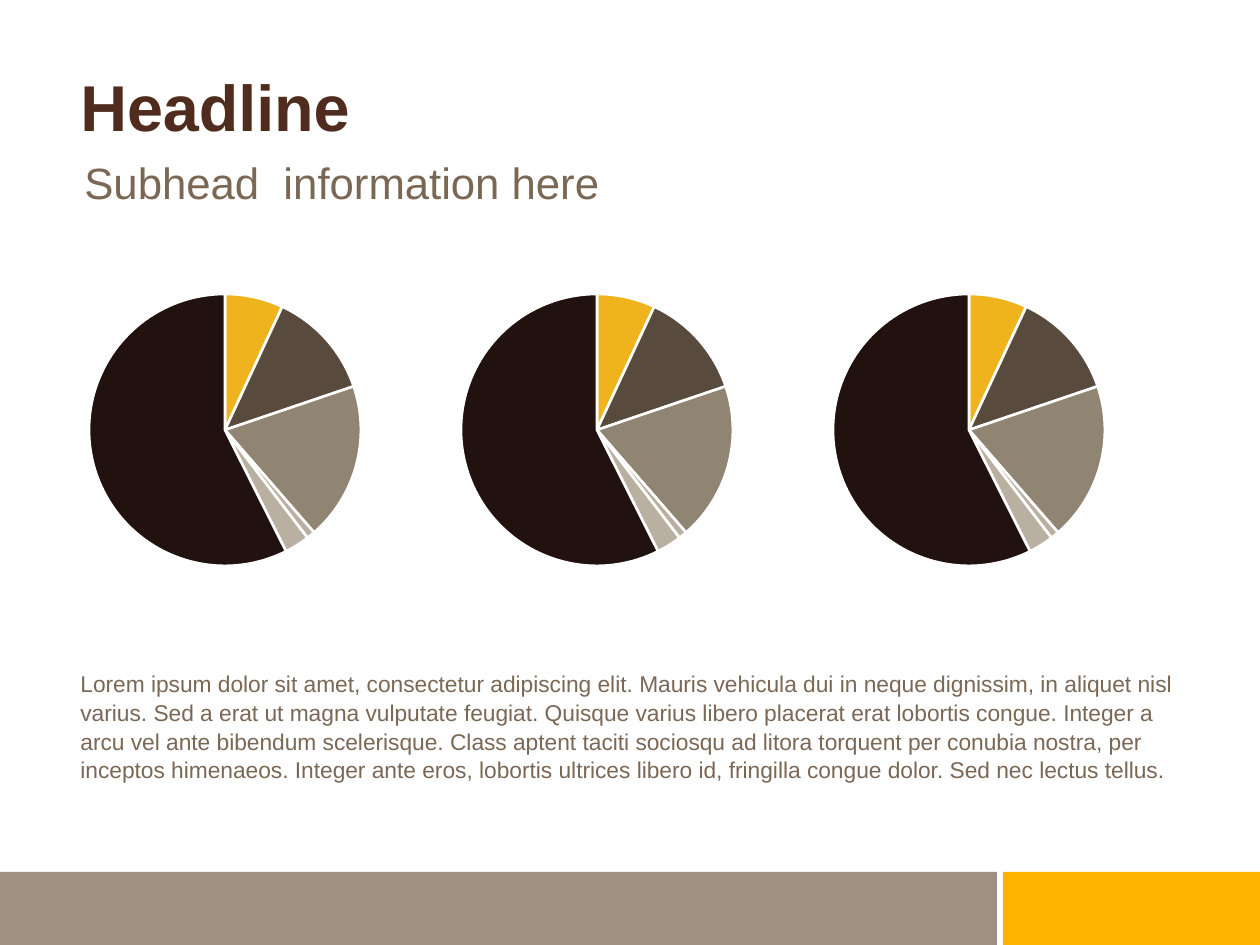
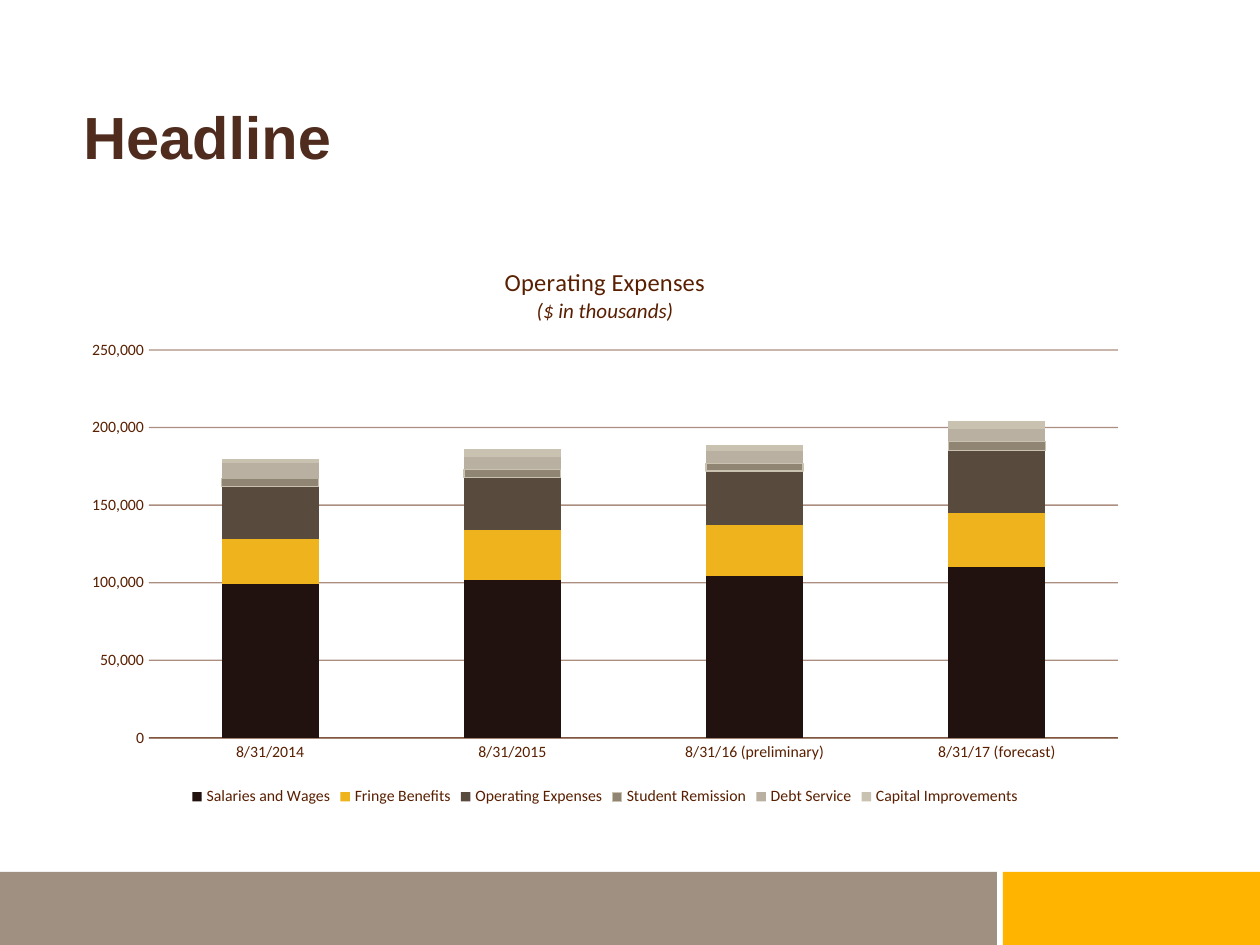
"""Build two headline slides: a row of pie charts and a stacked column chart."""

from dataclasses import dataclass
from typing import NamedTuple

from lxml.etree import SubElement
from pptx import Presentation
from pptx.chart.chart import Chart
from pptx.chart.data import CategoryChartData
from pptx.dml.color import RGBColor
from pptx.dml.fill import FillFormat
from pptx.dml.line import LineFormat
from pptx.enum.chart import XL_CHART_TYPE, XL_LEGEND_POSITION, XL_TICK_MARK
from pptx.enum.shapes import MSO_SHAPE
from pptx.enum.text import MSO_ANCHOR
from pptx.oxml.ns import qn
from pptx.slide import Slide
from pptx.text.text import Font
from pptx.util import Emu, Pt

EMU_PER_PX = 914400 / 126
SLIDE_WIDTH, SLIDE_HEIGHT = 1260, 945
TEXT_FONT, CHART_FONT = "Arial", "Calibri"

COLORS = {
    "white": "FFFFFF",
    "black": "000000",
    "band": "9F9081",
    "accent": "FFB500",
    "headline": "4F2C1D",
    "body": "7A6855",
    "axis": "591F00",
    "espresso": "21120F",
    "gold": "EFB31D",
    "umber": "584B3D",
    "taupe": "908472",
    "stone": "B9B0A1",
    "sand": "CAC2B0",
}

BODY = (
    "Lorem ipsum dolor sit amet, consectetur adipiscing elit. Mauris vehicula dui in neque "
    "dignissim, in aliquet nisl varius. Sed a erat ut magna vulputate feugiat. Quisque varius "
    "libero placerat erat lobortis congue. Integer a arcu vel ante bibendum scelerisque. Class "
    "aptent taciti sociosqu ad litora torquent per conubia nostra, per inceptos himenaeos. "
    "Integer ante eros, lobortis ultrices libero id, fringilla congue dolor. Sed nec lectus tellus."
)


class Box(NamedTuple):
    """A rectangle in px."""

    left: int
    top: int
    width: int
    height: int

    def emu(self) -> list[Emu]:
        """Return the four lengths in EMU."""
        return [px(length) for length in self]


@dataclass(frozen=True)
class TextStyle:
    """The look of a text box."""

    size: int
    color: str
    bold: bool = False
    line_spacing: float = 1.0
    anchor: MSO_ANCHOR = MSO_ANCHOR.TOP


class Band(NamedTuple):
    """A footer band."""

    box: Box
    color: str


class Expense(NamedTuple):
    """One series of the operating expenses chart, in thousands of dollars."""

    name: str
    thousands: tuple[int, ...]
    color: str
    outline: str = ""


class PieSlice(NamedTuple):
    """One slice of a pie chart."""

    value: int
    color: str


BANDS = (
    Band(Box(-2, 872, 999, 73), "band"),
    Band(Box(1003, 872, 257, 73), "accent"),
)

PIE_SLICES = (
    PieSlice(7, "gold"),
    PieSlice(13, "umber"),
    PieSlice(19, "taupe"),
    PieSlice(1, "stone"),
    PieSlice(3, "stone"),
    PieSlice(58, "espresso"),
)
PIE_COUNT, PIE_LEFT, PIE_PITCH = 3, 21, 372
PIE_DIAMETER = 272

EXPENSE_DATES = ("8/31/2014", "8/31/2015", "8/31/16 (preliminary)", "8/31/17 (forecast)")
EXPENSES = (
    Expense("Salaries and Wages", (99, 102, 104, 110), "espresso"),
    Expense("Fringe Benefits", (29, 32, 33, 35), "gold"),
    Expense("Operating Expenses", (34, 34, 35, 40), "umber"),
    Expense("Student Remission", (5, 5, 5, 6), "taupe", "sand"),
    Expense("Debt Service", (10, 8, 8, 8), "stone"),
    Expense("Capital Improvements", (3, 5, 4, 5), "sand"),
)


def px(length: int) -> Emu:
    """Turn px into EMU."""
    return Emu(round(length * EMU_PER_PX))


def rgb(name: str) -> RGBColor:
    """Look up a named colour."""
    return RGBColor.from_string(COLORS[name])


def paint(fill: FillFormat, color: str) -> None:
    """Give a fill one solid colour."""
    fill.solid()
    fill.fore_color.rgb = rgb(color)


def stroke(line: LineFormat, color: str, width: float = 0.75) -> None:
    """Give a line a colour and a width, or hide it without a colour."""
    if not color:
        line.fill.background()
        return
    line.color.rgb = rgb(color)
    line.width = Pt(width)


def style_font(font: Font, name: str, size: int, color: str, bold: bool = False) -> None:
    """Set the face, size, colour and weight of a font."""
    font.name = name
    font.size = Pt(size)
    font.color.rgb = rgb(color)
    font.bold = bold


def add_text(slide: Slide, box: Box, text: str, style: TextStyle) -> None:
    """Draw a wrapped text box with one paragraph."""
    frame = slide.shapes.add_textbox(*box.emu()).text_frame
    frame.word_wrap = True
    frame.vertical_anchor = style.anchor
    paragraph = frame.paragraphs[0]
    paragraph.line_spacing = style.line_spacing
    run = paragraph.add_run()
    run.text = text
    style_font(run.font, TEXT_FONT, style.size, style.color, style.bold)


def add_headline(slide: Slide, box: Box, size: int) -> None:
    """Draw the slide headline."""
    add_text(slide, box, "Headline", TextStyle(size, "headline", True, 0.9))


def add_base_slide(presentation: Presentation) -> Slide:
    """Add a blank slide with the white background and footer bands."""
    slide = presentation.slides.add_slide(presentation.slide_layouts[6])
    paint(slide.background.fill, "white")
    for band in BANDS:
        shape = slide.shapes.add_shape(MSO_SHAPE.RECTANGLE, *band.box.emu())
        shape.shadow.inherit = False
        paint(shape.fill, band.color)
        stroke(shape.line, "")
    return slide


def place_plot(chart: Chart, frame: Box, plot: Box) -> None:
    """Fix the inner plot area, given in slide px, within the chart frame."""
    area = chart.element.find(f".//{qn('c:plotArea')}")
    for previous in area.findall(qn("c:layout")):
        area.remove(previous)
    layout = area.makeelement(qn("c:layout"))
    area.insert(0, layout)
    manual = SubElement(layout, qn("c:manualLayout"))
    settings = {
        "layoutTarget": "inner",
        "xMode": "edge",
        "yMode": "edge",
        "x": (plot.left - frame.left) / frame.width,
        "y": (plot.top - frame.top) / frame.height,
        "w": plot.width / frame.width,
        "h": plot.height / frame.height,
    }
    for tag, value in settings.items():
        SubElement(manual, qn(f"c:{tag}")).set("val", str(value))


def add_pie(slide: Slide, frame: Box) -> None:
    """Draw a pie chart centred in its frame."""
    data = CategoryChartData()
    data.categories = [str(number) for number in range(1, len(PIE_SLICES) + 1)]
    data.add_series("Series 1", [pie_slice.value for pie_slice in PIE_SLICES])
    chart = slide.shapes.add_chart(XL_CHART_TYPE.PIE, *frame.emu(), data).chart
    style_font(chart.font, CHART_FONT, 12, "black")
    chart.has_title = False
    chart.has_legend = False
    plot = chart.plots[0]
    plot.vary_by_categories = True
    for index, pie_slice in enumerate(PIE_SLICES):
        point_format = plot.series[0].points[index].format
        paint(point_format.fill, pie_slice.color)
        stroke(point_format.line, "white", 1.5)
    left = frame.left + (frame.width - PIE_DIAMETER) // 2
    top = frame.top + (frame.height - PIE_DIAMETER) // 2
    place_plot(chart, frame, Box(left, top, PIE_DIAMETER, PIE_DIAMETER))


def add_chart_title(chart: Chart) -> None:
    """Write the two-line title of the expenses chart."""
    frame = chart.chart_title.text_frame
    lines = (("Operating Expenses", 14, False), ("($ in thousands)", 12, True))
    for index, (text, size, italic) in enumerate(lines):
        paragraph = frame.add_paragraph() if index else frame.paragraphs[0]
        run = paragraph.add_run()
        run.text = text
        style_font(run.font, CHART_FONT, size, "axis")
        run.font.italic = italic
    chart.chart_title.include_in_layout = False


def style_axes(chart: Chart) -> None:
    """Set labels, scale and half-transparent lines of both axes."""
    category_axis, value_axis = chart.category_axis, chart.value_axis
    for axis in (category_axis, value_axis):
        axis.major_tick_mark = axis.minor_tick_mark = XL_TICK_MARK.NONE
        style_font(axis.tick_labels.font, CHART_FONT, 9, "axis")
    value_axis.minimum_scale = 0
    value_axis.maximum_scale = 250000
    value_axis.major_unit = 50000
    value_axis.tick_labels.number_format = "#,##0"
    value_axis.tick_labels.number_format_is_linked = False
    stroke(category_axis.format.line, "axis")
    stroke(value_axis.format.line, "")
    stroke(value_axis.major_gridlines.format.line, "axis")
    for parent, child in (("c:catAx", "c:spPr"), ("c:valAx", "c:majorGridlines")):
        lines = chart.element.find(f".//{qn(parent)}/{qn(child)}")
        for color in lines.iter(qn("a:srgbClr")):
            SubElement(color, qn("a:alpha")).set("val", "50000")


def add_expenses_chart(slide: Slide, frame: Box) -> None:
    """Draw the stacked operating expenses chart."""
    data = CategoryChartData(number_format="#,##0")
    data.categories = EXPENSE_DATES
    for expense in EXPENSES:
        data.add_series(expense.name, [value * 1000 for value in expense.thousands])
    chart = slide.shapes.add_chart(XL_CHART_TYPE.COLUMN_STACKED, *frame.emu(), data).chart
    style_font(chart.font, CHART_FONT, 10, "black")
    add_chart_title(chart)
    chart.has_legend = True
    chart.legend.position = XL_LEGEND_POSITION.BOTTOM
    chart.legend.include_in_layout = False
    style_font(chart.legend.font, CHART_FONT, 9, "axis")
    plot = chart.plots[0]
    plot.vary_by_categories = False
    plot.gap_width = 150
    plot.overlap = 100
    for series, expense in zip(plot.series, EXPENSES):
        paint(series.format.fill, expense.color)
        stroke(series.format.line, expense.outline)
    style_axes(chart)
    place_plot(chart, frame, Box(149, 350, 969, 388))


def main() -> None:
    """Build and save the presentation."""
    presentation = Presentation()
    presentation.slide_width = px(SLIDE_WIDTH)
    presentation.slide_height = px(SLIDE_HEIGHT)

    slide = add_base_slide(presentation)
    add_headline(slide, Box(68, 69, 1134, 118), 37)
    subhead = TextStyle(25, "body", line_spacing=1.1)
    add_text(slide, Box(72, 144, 1136, 66), "Subhead  information here", subhead)
    for index in range(PIE_COUNT):
        add_pie(slide, Box(PIE_LEFT + index * PIE_PITCH, 276, 408, 308))
    body = TextStyle(13, "body", line_spacing=1.05, anchor=MSO_ANCHOR.MIDDLE)
    add_text(slide, Box(68, 670, 1139, 112), BODY, body)

    slide = add_base_slide(presentation)
    add_expenses_chart(slide, Box(71, 244, 1068, 567))
    add_headline(slide, Box(71, 102, 1134, 100), 34)
    presentation.save("out.pptx")


if __name__ == "__main__":
    main()
